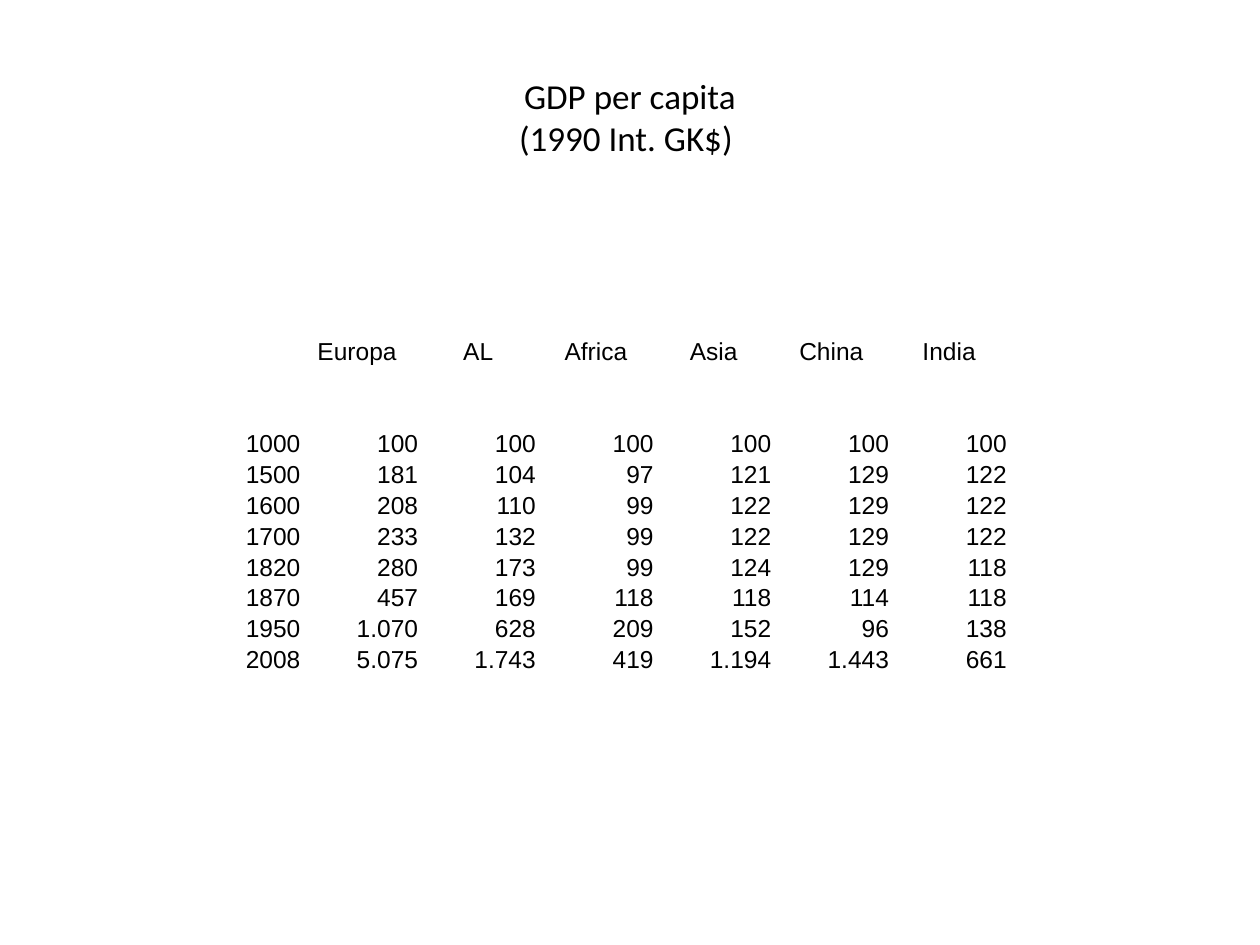
import lxml.etree
import pptx
import pptx.dml.color
import pptx.enum.text
import pptx.oxml.ns
import pptx.util

Inches = pptx.util.Inches
Align = pptx.enum.text.PP_ALIGN
Anchor = pptx.enum.text.MSO_ANCHOR

REGIONS = ["", "Europa ", "AL", "Africa", "Asia", "China", "India"]
GDP_INDEX = [
    ["1000", "100", "100", "100", "100", "100", "100"],
    ["1500", "181", "104", "97", "121", "129", "122"],
    ["1600", "208", "110", "99", "122", "129", "122"],
    ["1700", "233", "132", "99", "122", "129", "122"],
    ["1820", "280", "173", "99", "124", "129", "118"],
    ["1870", "457", "169", "118", "118", "114", "118"],
    ["1950", "1.070", "628", "209", "152", "96", "138"],
    ["2008", "5.075", "1.743", "419", "1.194", "1.443", "661"],
]
EMPTY_ROW = [""] * len(REGIONS)
HEADER_HEIGHT = 0.65


def color(value):
    return pptx.dml.color.RGBColor.from_string(value)


def format_para(para, font, size, align):
    para.alignment = align
    for span in para.runs:
        span.font.name = font
        span.font.size = pptx.util.Pt(size)
        span.font.color.rgb = color("000000")


def add_title(page, left, top, width, height):
    box = page.shapes.add_textbox(Inches(left), Inches(top), Inches(width), Inches(height))
    frame = box.text_frame
    frame.word_wrap = True
    frame.vertical_anchor = Anchor.MIDDLE
    frame.text = "GDP per capita\n(1990 Int. GK$) "
    for para in frame.paragraphs:
        format_para(para, "Calibri", 20, Align.CENTER)


def fill_cell(cell, text, align):
    cell.fill.background()
    cell.vertical_anchor = Anchor.BOTTOM
    cell.margin_left = cell.margin_top = cell.margin_right = Inches(0.01)
    cell.margin_bottom = 0
    para = cell.text_frame.paragraphs[0]
    if text:
        para.text = text
        format_para(para, "Arial", 14, align)
    else:
        lxml.etree.SubElement(para._p, pptx.oxml.ns.qn("a:endParaRPr"), sz="1200")


def add_gdp_table(page, left, top, width, height):
    rows = [REGIONS, EMPTY_ROW, EMPTY_ROW] + GDP_INDEX
    table = page.shapes.add_table(
        len(rows), len(REGIONS), Inches(left), Inches(top), Inches(width), Inches(height)
    ).table
    table.first_row = False
    table.horz_banding = False
    for column in table.columns:
        column.width = Inches(width / len(REGIONS))
    for index, values in enumerate(rows):
        header = index == 0
        row_height = HEADER_HEIGHT if header else (height - HEADER_HEIGHT) / (len(rows) - 1)
        table.rows[index].height = Inches(row_height)
        align = Align.CENTER if header else Align.RIGHT
        for cell, text in zip(table.rows[index].cells, values):
            fill_cell(cell, text, align)


def main():
    deck = pptx.Presentation()
    deck.slide_width = Inches(10)
    deck.slide_height = Inches(7.5)
    page = deck.slides.add_slide(deck.slide_layouts[6])
    add_gdp_table(page, 1.46, 2.25, 6.54, 3.1)
    add_title(page, 0.5, 0.54, 9, 0.77)
    deck.save("out.pptx")


if __name__ == "__main__":
    main()
